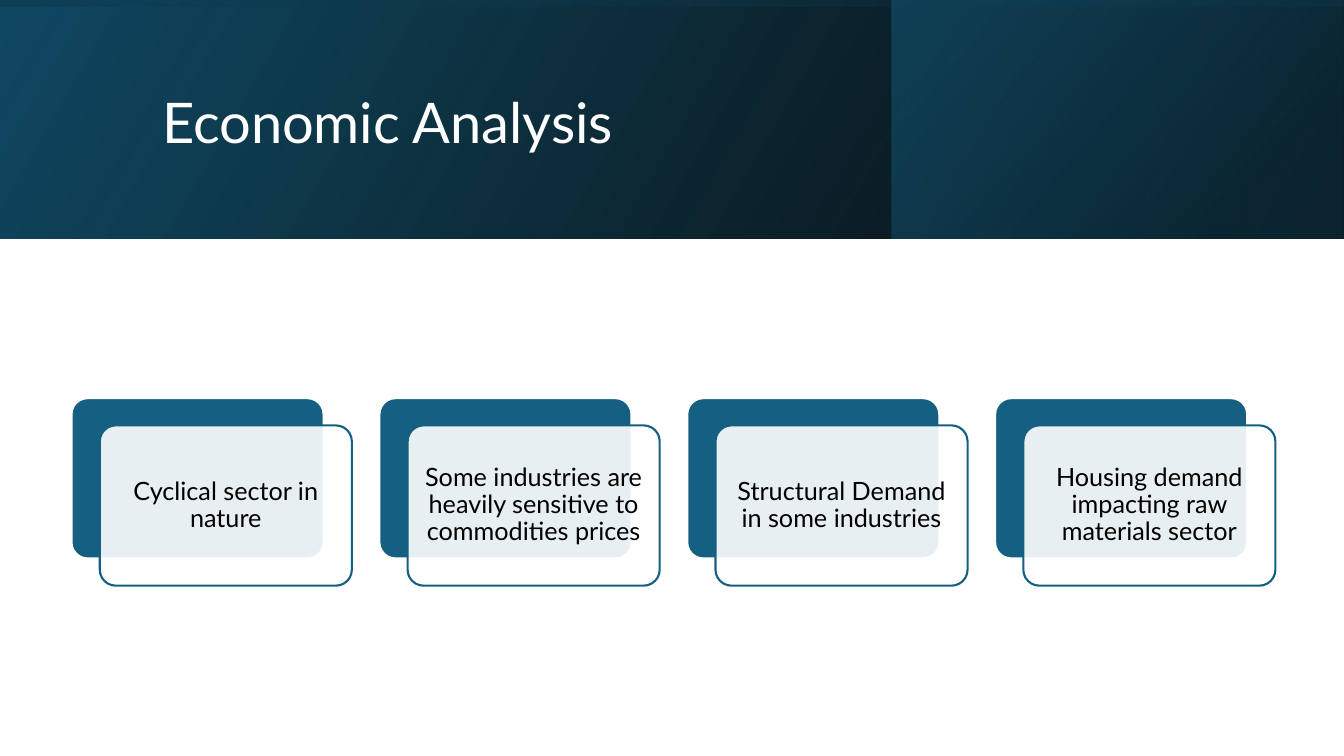
import pptx
import pptx.util
import pptx.dml.color
import pptx.enum.shapes
import pptx.enum.text
import pptx.oxml
from pptx.oxml.ns import qn

Inches, Pt = pptx.util.Inches, pptx.util.Pt
RGBColor = pptx.dml.color.RGBColor
SHAPE = pptx.enum.shapes.MSO_SHAPE
ALIGN, ANCHOR = pptx.enum.text.PP_ALIGN, pptx.enum.text.MSO_ANCHOR

# Content
TITLE = "Economic Analysis"
POINTS = [
    "Cyclical sector in nature",
    "Some industries are heavily sensitive to commodities prices",
    "Structural Demand in some industries",
    "Housing demand impacting raw materials sector",
]

# Style
FONT = "Lato"
WHITE = RGBColor(0xFF, 0xFF, 0xFF)
BLACK = RGBColor(0x00, 0x00, 0x00)
TEAL = RGBColor(0x15, 0x60, 0x82)
DEEP_TEAL = RGBColor(0x10, 0x48, 0x62)
NAVY = RGBColor(0x0B, 0x30, 0x41)

# Banner layers: box, rotation, clockwise gradient angle, stops (position %, colour, opacity %)
BANNER = [
    ((0, 0, 13.33, 2.37), 0, 330, [(0, BLACK, 96), (100, DEEP_TEAL, 100)]),
    ((8.84, 0, 4.48, 2.37), 0, 320, [(19, NAVY, 68), (100, TEAL, 48)]),
    ((5.48, -5.48, 2.37, 13.33), 270, 350, [(23, DEEP_TEAL, 16), (99, BLACK, 45)]),
]

# Card grid
CARD_LEFT, LAST_CARD_LEFT, CARD_TOP = 0.71, 9.87, 3.95
CARD_W, CARD_H = 2.5, 1.59
CARD_STEP = (LAST_CARD_LEFT - CARD_LEFT) / (len(POINTS) - 1)
FRONT_SHIFT = 0.28


def set_opacity(color_element, percent):
    alpha = pptx.oxml.parse_xml(
        '<a:alpha xmlns:a="http://schemas.openxmlformats.org/drawingml/2006/main" '
        f'val="{percent * 1000}"/>')
    color_element.append(alpha)


def add_banner_layer(slide, box, rotation, angle, stops):
    layer = slide.shapes.add_shape(SHAPE.RECTANGLE, *map(Inches, box))
    layer.shadow.inherit = False
    layer.rotation = rotation
    layer._element.spPr.find(qn("a:xfrm")).set("flipH", "1")
    layer.line.fill.background()
    layer.fill.gradient()
    layer.fill.gradient_angle = 360 - angle
    for stop, (position, color, opacity) in zip(layer.fill.gradient_stops, stops):
        stop.position = position / 100
        stop.color.rgb = color
    colors = layer._element.spPr.iter(qn("a:srgbClr"))
    for color_element, (_, _, opacity) in zip(list(colors), stops):
        set_opacity(color_element, opacity)


def add_card(slide, left, top, fill, outline):
    card = slide.shapes.add_shape(SHAPE.ROUNDED_RECTANGLE, Inches(left), Inches(top),
                                  Inches(CARD_W), Inches(CARD_H))
    card.adjustments[0] = 0.1
    card.shadow.inherit = False
    card.fill.solid()
    card.fill.fore_color.rgb = fill
    card.line.color.rgb = outline
    card.line.width = Pt(1.5)
    return card


def write(frame, text, size, color, align):
    frame.word_wrap = True
    frame.vertical_anchor = ANCHOR.MIDDLE
    paragraph = frame.paragraphs[0]
    paragraph.text = text
    paragraph.alignment = align
    paragraph.line_spacing = 0.9
    paragraph.font.name = FONT
    paragraph.font.size = Pt(size)
    paragraph.font.color.rgb = color


def main():
    deck = pptx.Presentation()
    deck.slide_width, deck.slide_height = Inches(13.33), Inches(7.5)
    slide = deck.slides.add_slide(deck.slide_layouts[6])

    # Banner and title
    for layer in BANNER:
        add_banner_layer(slide, *layer)
    title = slide.shapes.add_textbox(Inches(1.51), Inches(0.38), Inches(10.63), Inches(1.72))
    write(title.text_frame, TITLE, 40, WHITE, ALIGN.LEFT)

    # Cards: solid back, translucent front carrying the text
    for index, point in enumerate(POINTS):
        left = CARD_LEFT + index * CARD_STEP
        add_card(slide, left, CARD_TOP, TEAL, WHITE)
        front = add_card(slide, left + FRONT_SHIFT, CARD_TOP + 0.27, WHITE, TEAL)
        set_opacity(front._element.spPr.find(qn("a:solidFill"))[0], 90)
        frame = front.text_frame
        frame.margin_left = frame.margin_right = Inches(0.07)
        frame.margin_top = frame.margin_bottom = Inches(0.07)
        write(frame, point, 18, BLACK, ALIGN.CENTER)

    deck.save("out.pptx")


if __name__ == "__main__":
    main()
